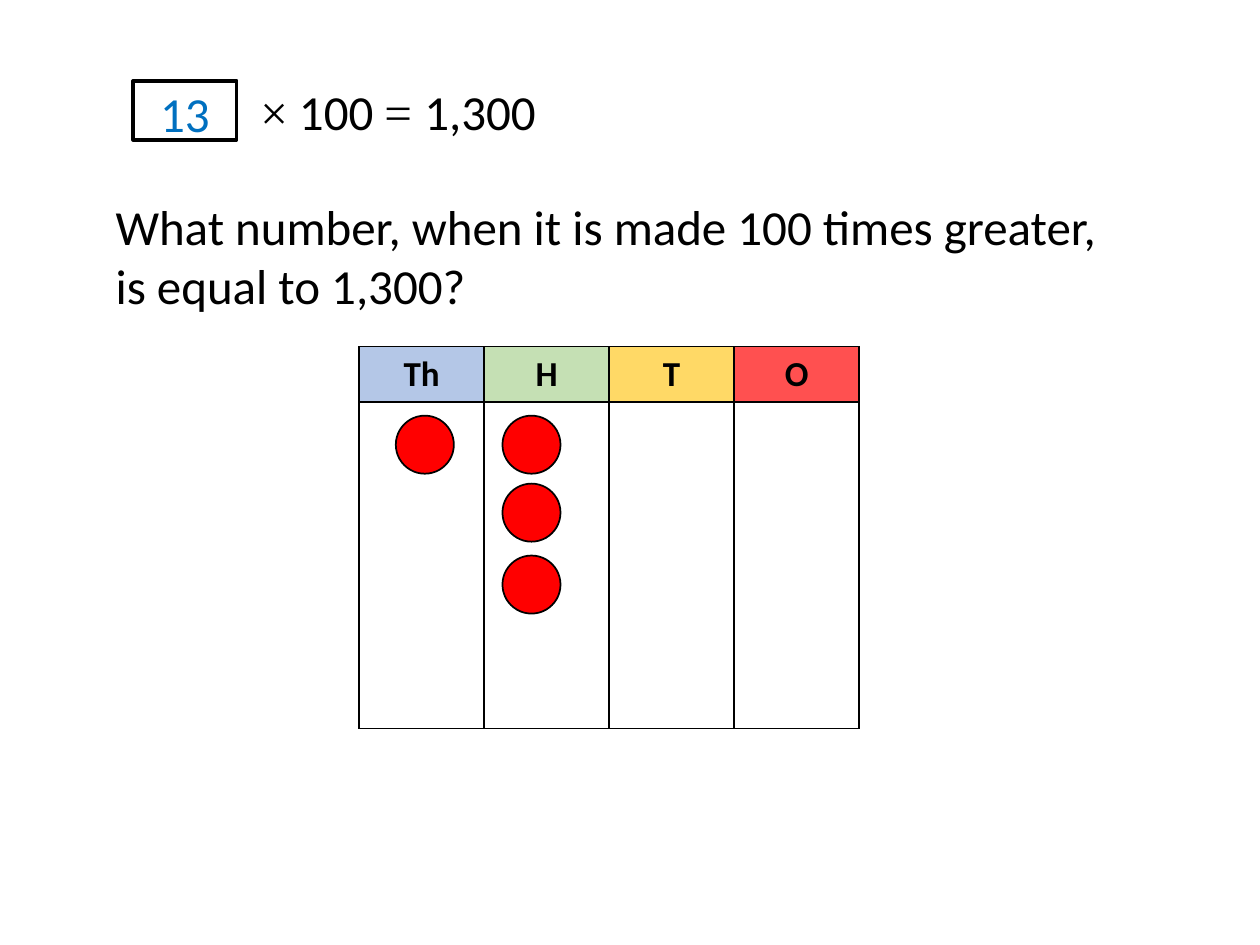
"""Build a place value slide asking which number becomes 1,300 when multiplied by 100."""
import pptx
import pptx.dml.color
import pptx.enum.shapes
import pptx.enum.text
import pptx.oxml.ns
import pptx.util
from lxml import etree
from pptx.util import Cm

COLOURS = {
    "black": "000000", "answer": "0070C0", "counter": "FF0000",
    "thousands": "B4C7E7", "hundreds": "C5E0B4", "tens": "FFD966", "ones": "FF5050",
}
EQUATION = [("×", "Times New Roman"), (" 100 ", "Calibri"),
            ("= ", "Times New Roman"), ("1,300", "Calibri")]
QUESTION = [("What number, when it is made 100 times greater, is equal to 1,300?", "Calibri")]
ANSWER = [("13", "Calibri")]
HEADINGS = [("Th", "thousands"), ("H", "hundreds"), ("T", "tens"), ("O", "ones")]
ROW_HEIGHTS = [1.11, 6.59]
COLUMN_WIDTH = 2.52
COUNTER_SIZE = 1.17
COUNTERS = [(7.98, 8.38), (10.13, 8.38), (10.13, 9.75), (10.13, 11.2)]
CENTRE = pptx.enum.text.PP_ALIGN.CENTER
SHAPES = pptx.enum.shapes.MSO_SHAPE


def rgb(name):
    return pptx.dml.color.RGBColor.from_string(COLOURS[name])


def write_text(frame, runs, size=28, colour="black", bold=False, align=None, wrap=True):
    frame.word_wrap = wrap
    paragraph = frame.paragraphs[0]
    paragraph.alignment = align
    for text, font_name in runs:
        run = paragraph.add_run()
        run.text = text
        run.font.name = font_name
        run.font.size = pptx.util.Pt(size)
        run.font.bold = bold
        run.font.color.rgb = rgb(colour)


def add_text(slide, box, runs, **text_format):
    textbox = slide.shapes.add_textbox(*map(Cm, box))
    write_text(textbox.text_frame, runs, **text_format)


def add_outline(slide, kind, box, line_width, fill=None):
    shape = slide.shapes.add_shape(kind, *map(Cm, box))
    shape.shadow.inherit = False
    if fill:
        shape.fill.solid()
        shape.fill.fore_color.rgb = rgb(fill)
    else:
        shape.fill.background()
    shape.line.color.rgb = rgb("black")
    shape.line.width = pptx.util.Pt(line_width)


def add_borders(cell):
    qn = pptx.oxml.ns.qn
    properties = cell._tc.get_or_add_tcPr()
    for position, side in enumerate(("a:lnL", "a:lnR", "a:lnT", "a:lnB")):
        border = etree.Element(qn(side), w=str(pptx.util.Pt(1)))
        fill = etree.SubElement(border, qn("a:solidFill"))
        etree.SubElement(fill, qn("a:srgbClr"), val=COLOURS["black"])
        properties.insert(position, border)


def add_place_value_table(slide):
    box = (7.24, 6.99, COLUMN_WIDTH * len(HEADINGS), sum(ROW_HEIGHTS))
    table = slide.shapes.add_table(len(ROW_HEIGHTS), len(HEADINGS), *map(Cm, box)).table
    table.first_row = table.horz_banding = False
    for row, height in zip(table.rows, ROW_HEIGHTS):
        row.height = Cm(height)
    for index, (heading, colour) in enumerate(HEADINGS):
        table.columns[index].width = Cm(COLUMN_WIDTH)
        header, body = table.cell(0, index), table.cell(1, index)
        header.fill.solid()
        header.fill.fore_color.rgb = rgb(colour)
        header.vertical_anchor = pptx.enum.text.MSO_ANCHOR.MIDDLE
        write_text(header.text_frame, [(heading, "Calibri")], size=20, bold=True, align=CENTRE)
        body.fill.background()
        for cell in (header, body):
            add_borders(cell)


def main():
    presentation = pptx.Presentation()
    presentation.slide_width, presentation.slide_height = Cm(25.4), Cm(19.05)
    slide = presentation.slides.add_slide(presentation.slide_layouts[6])
    add_text(slide, (5, 1.52, 7.29, 1.45), EQUATION)
    add_outline(slide, SHAPES.RECTANGLE, (2.69, 1.63, 2.08, 1.19), 2.25)
    add_text(slide, (2.08, 3.84, 20.45, 2.64), QUESTION)
    add_place_value_table(slide)
    add_text(slide, (2.97, 1.55, 1.52, 1.45), ANSWER, colour="answer", align=CENTRE, wrap=False)
    for left, top in COUNTERS:
        add_outline(slide, SHAPES.OVAL, (left, top, COUNTER_SIZE, COUNTER_SIZE), 1, "counter")
    presentation.save("out.pptx")


if __name__ == "__main__":
    main()
